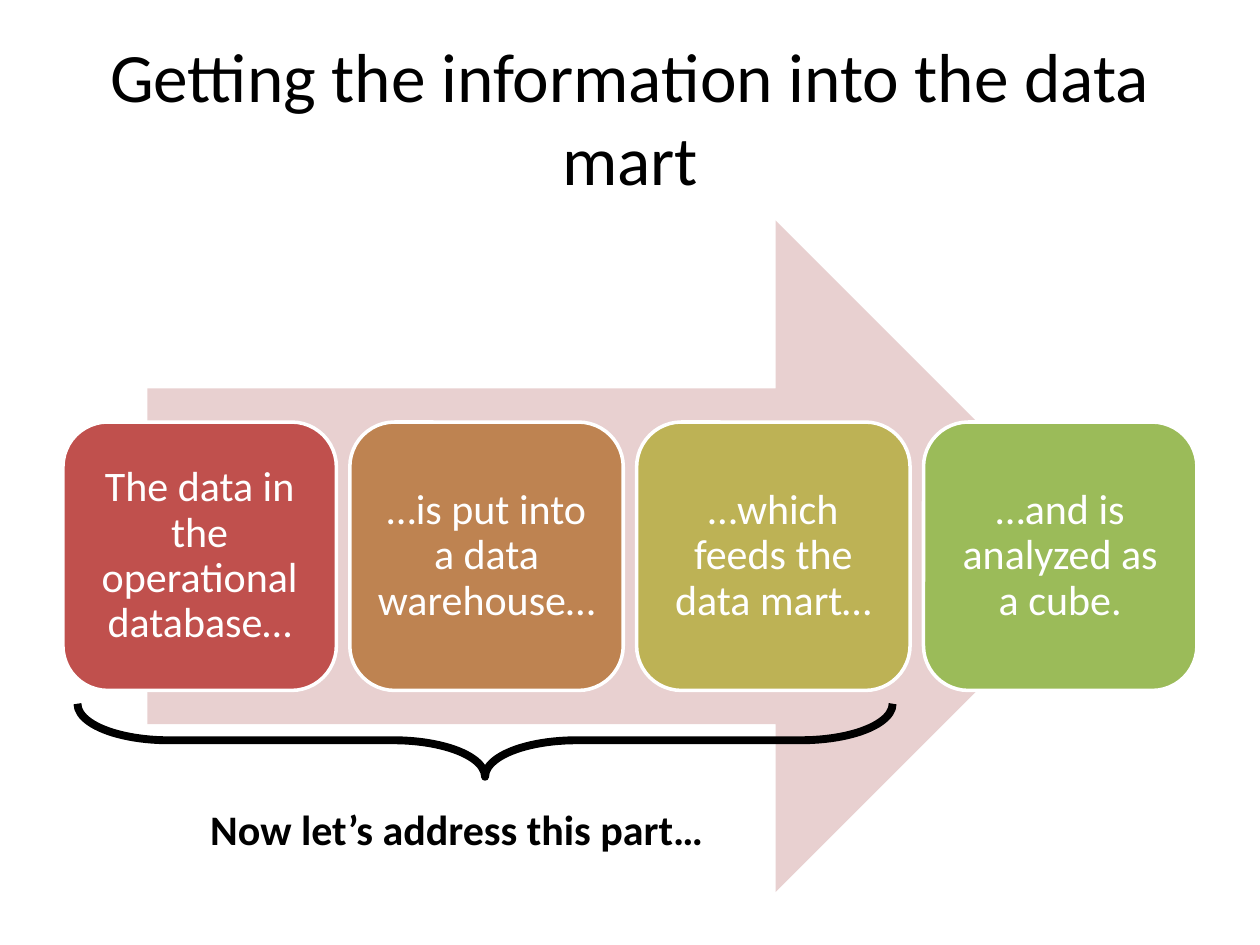
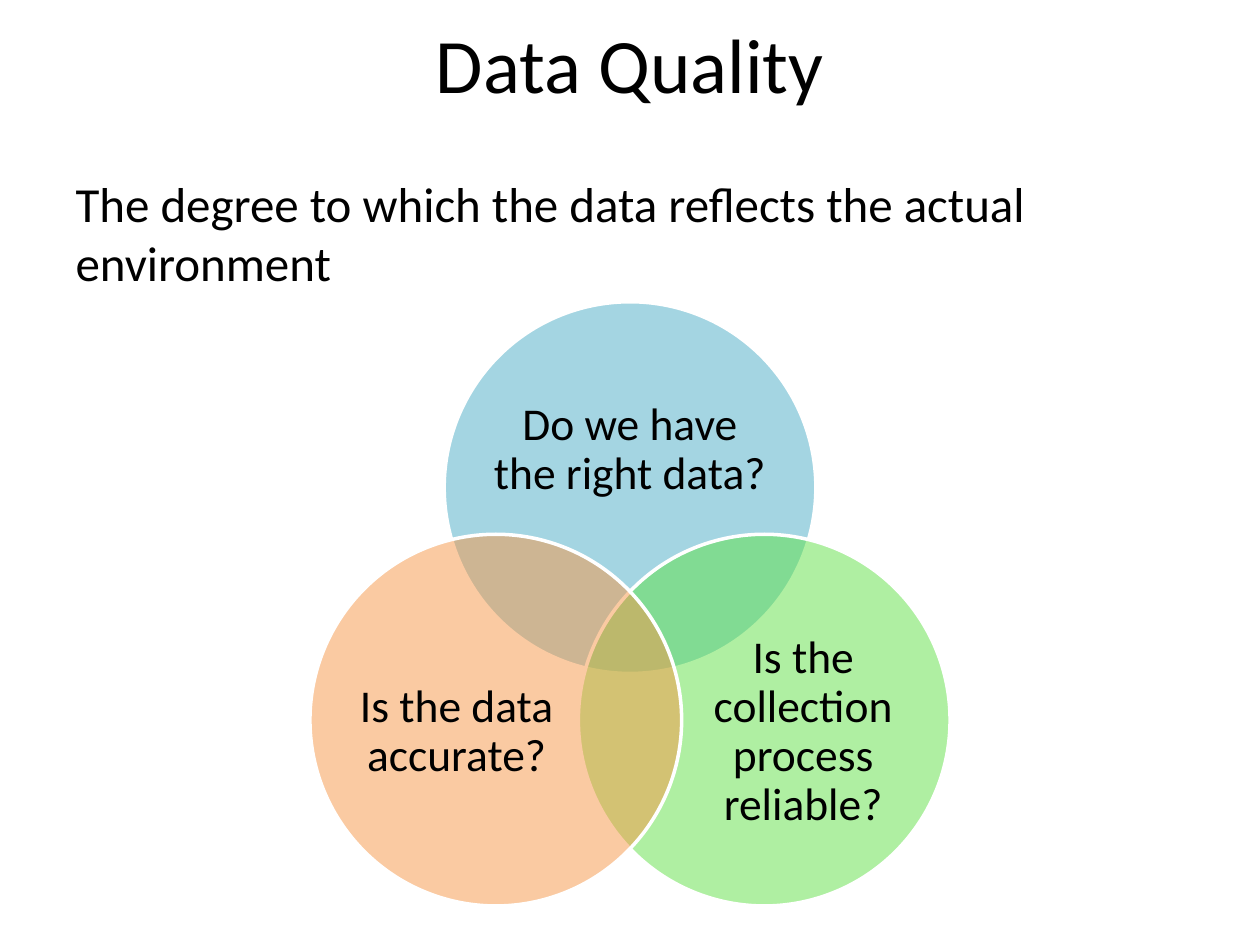
from math import cos, radians, sin

from lxml.etree import SubElement
from pptx import Presentation
from pptx.dml.color import RGBColor
from pptx.enum.shapes import MSO_SHAPE
from pptx.enum.text import MSO_ANCHOR, MSO_AUTO_SIZE, PP_ALIGN
from pptx.oxml.ns import qn
from pptx.util import Inches, Pt

FONT = "Calibri"
BLACK, WHITE, PALE_RED = "000000", "FFFFFF", "E8D0D0"
TITLE_ONLY, TITLE_AND_BODY = 5, 1

STEPS = [
    ("The data in the operational database…", "C0504D"),
    ("…is put into a data warehouse…", "BE8351"),
    ("…which feeds the data mart…", "BDB255"),
    ("…and is analyzed as a cube.", "9BBB59"),
]

QUESTIONS = [
    ("Do we have the right data?", "4BACC6", -90, (3.92, 2.91, 2.16, 1.33)),
    ("Is the collection process reliable?", "60E146", 30, (5.49, 5, 1.77, 1.62)),
    ("Is the data accurate?", "F79646", 150, (2.74, 5, 1.77, 1.62)),
]


def rgb(color):
    """Turn a hex string into a colour."""
    return RGBColor.from_string(color)


class Deck:
    """Holds the shared style and the current slide."""

    def __init__(self):
        """Start a presentation of 10 by 7.5 inches."""
        self.prs = Presentation()
        self.prs.slide_width, self.prs.slide_height = Inches(10), Inches(7.5)

    def new_slide(self, layout, title, box, size):
        """Add a slide and fill its title placeholder."""
        self.slide = self.prs.slides.add_slide(self.prs.slide_layouts[layout])
        self.placeholder(self.slide.shapes.title, title, box, size, PP_ALIGN.CENTER)

    def place(self, sp, box):
        """Move a shape to left, top, width, height in inches."""
        sp.left, sp.top, sp.width, sp.height = map(Inches, box)

    def add_text(self, sp, text, size, color=BLACK, align=PP_ALIGN.CENTER,
                 bold=False, spacing=None, margin=None, anchor=None):
        """Put one wrapped paragraph into a shape."""
        tf = sp.text_frame
        tf.word_wrap = True
        if anchor is not None:
            tf.vertical_anchor = anchor
        if margin is not None:
            tf.margin_left = tf.margin_right = Inches(margin)
            tf.margin_top = tf.margin_bottom = Inches(margin)
        p = tf.paragraphs[0]
        p.alignment = align
        p.line_spacing = spacing
        r = p.add_run()
        r.text = text
        r.font.name, r.font.size, r.font.bold = FONT, Pt(size), bold
        r.font.color.rgb = rgb(color)
        return p

    def placeholder(self, sp, text, box, size, align):
        """Move and fill a template placeholder."""
        self.place(sp, box)
        sp.text_frame.auto_size = MSO_AUTO_SIZE.NONE
        return self.add_text(sp, text, size, align=align)

    def body(self, text, box, size):
        """Fill the body placeholder with unbulleted text."""
        sp = self.slide.placeholders[1]
        p = self.placeholder(sp, text, box, size, PP_ALIGN.LEFT)
        pPr = p._p.get_or_add_pPr()
        pPr.set("marL", "0")
        pPr.set("indent", "0")
        SubElement(pPr, qn("a:buNone"))

    def shape(self, kind, box, fill=None, line=None, width=2, alpha=None):
        """Add a preset shape without shadow."""
        sp = self.slide.shapes.add_shape(kind, *map(Inches, box))
        sp.shadow.inherit = False
        if fill:
            sp.fill.solid()
            sp.fill.fore_color.rgb = rgb(fill)
        else:
            sp.fill.background()
        if alpha:
            solid = sp._element.spPr.find(qn("a:solidFill"))
            SubElement(solid.find(qn("a:srgbClr")), qn("a:alpha"),
                       val=str(alpha * 1000))
        if line:
            sp.line.color.rgb = rgb(line)
            sp.line.width = Pt(width)
        else:
            sp.line.fill.background()
        return sp

    def label(self, text, box, size, **style):
        """Add a text box."""
        sp = self.slide.shapes.add_textbox(*map(Inches, box))
        self.add_text(sp, text, size, **style)
        return sp


def process_slide(deck):
    """Build the four steps in front of an arrow."""
    deck.new_slide(TITLE_ONLY, "Getting the information into the data mart",
                   (0.5, 0.3, 9, 1.25), 39.6)
    deck.shape(MSO_SHAPE.RIGHT_ARROW, (1.17, 1.75, 7.65, 5.33), PALE_RED)
    left, width, span = 0.5, 2.17, 9
    pitch = (span - width) / (len(STEPS) - 1)
    for i, (text, color) in enumerate(STEPS):
        box = (left + i * pitch, 3.35, width, 2.13)
        sp = deck.shape(MSO_SHAPE.ROUNDED_RECTANGLE, box, color, WHITE)
        deck.add_text(sp, text, 24, WHITE, spacing=0.9, margin=0.1,
                      anchor=MSO_ANCHOR.MIDDLE)
    brace = deck.shape(MSO_SHAPE.LEFT_BRACE, (3.56, 2.64, 0.58, 6.47),
                       line=BLACK, width=4.5)
    brace.adjustments[0] = 1.25
    brace.rotation = 270
    caption = deck.label("Now let’s address this part…", (1, 6.33, 5.25, 0.5),
                         24, bold=True)
    caption.text_frame.auto_size = MSO_AUTO_SIZE.SHAPE_TO_FIT_TEXT


def quality_slide(deck):
    """Build the three overlapping questions."""
    deck.new_slide(TITLE_AND_BODY, "Data Quality", (0.5, 0, 9, 1), 44)
    deck.body("The degree to which the data reflects the actual environment",
              (0.5, 1.33, 9, 4.95), 28)
    center_x, center_y, reach, size = 5, 5.1, 1.23, 2.95
    for text, color, angle, text_box in QUESTIONS:
        x = center_x + reach * cos(radians(angle)) - size / 2
        y = center_y + reach * sin(radians(angle)) - size / 2
        deck.shape(MSO_SHAPE.OVAL, (x, y, size, size), color, WHITE, alpha=50)
        deck.label(text, text_box, 26, spacing=0.9, margin=0,
                   anchor=MSO_ANCHOR.MIDDLE)


def main():
    """Build and save both slides."""
    deck = Deck()
    process_slide(deck)
    quality_slide(deck)
    deck.prs.save("out.pptx")


if __name__ == "__main__":
    main()
